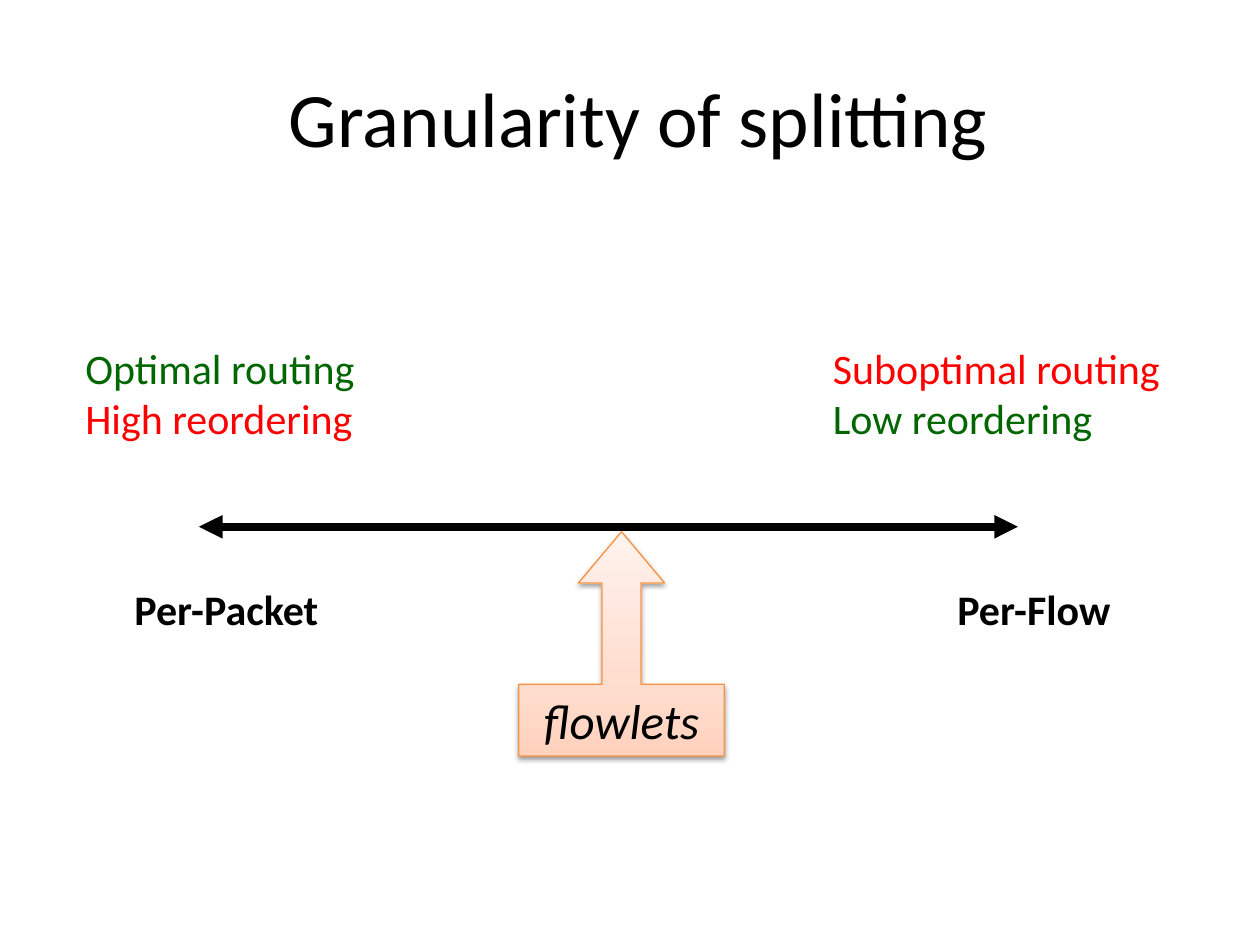
from dataclasses import dataclass

from lxml.etree import SubElement
from pptx import Presentation
from pptx.dml.color import RGBColor
from pptx.enum.shapes import MSO_CONNECTOR as Connector, MSO_SHAPE as Shape
from pptx.enum.text import MSO_ANCHOR as Anchor, MSO_AUTO_SIZE as AutoSize, PP_ALIGN as Align
from pptx.oxml.ns import qn
from pptx.util import Cm, Pt


@dataclass(frozen=True)
class Theme:
    font: str = "Calibri"
    ink: str = "000000"
    good: str = "006600"
    bad: str = "FF0000"
    callout_line: str = "F69240"
    callout_stops: tuple = ((0, "FFD2BD"), (35, "FFDED0"), (100, "FFF2ED"))
    title_size: int = 44
    body_size: int = 24
    callout_size: int = 28


THEME = Theme()


def rgb(color):
    return RGBColor.from_string(color)


def add_run(paragraph, text, size, color=THEME.ink, bold=None, italic=None):
    run = paragraph.add_run()
    run.text = text
    font = run.font
    font.name, font.size = THEME.font, Pt(size)
    font.bold, font.italic = bold, italic
    font.color.rgb = rgb(color)


def add_title(slide, text):
    box = slide.shapes.add_textbox(Cm(1.27), Cm(0.76), Cm(22.86), Cm(3.18))
    frame = box.text_frame
    frame.word_wrap = True
    frame.vertical_anchor = Anchor.MIDDLE
    paragraph = frame.paragraphs[0]
    paragraph.alignment = Align.CENTER
    add_run(paragraph, text, THEME.title_size)


def add_label(slide, left, top, width, height, lines, bold=None):
    """Add a text box with one paragraph per (text, color) line."""
    box = slide.shapes.add_textbox(Cm(left), Cm(top), Cm(width), Cm(height))
    frame = box.text_frame
    frame.word_wrap = False
    frame.auto_size = AutoSize.SHAPE_TO_FIT_TEXT
    for index, (text, color) in enumerate(lines):
        paragraph = frame.add_paragraph() if index else frame.paragraphs[0]
        add_run(paragraph, text, THEME.body_size, color, bold)


def add_double_arrow(slide, left, right, y):
    arrow = slide.shapes.add_connector(Connector.STRAIGHT, Cm(left), Cm(y), Cm(right), Cm(y))
    arrow.line.color.rgb = rgb(THEME.ink)
    arrow.line.width = Pt(4.5)
    line = arrow.line._get_or_add_ln()
    for end in ("a:headEnd", "a:tailEnd"):
        SubElement(line, qn(end), type="triangle")
    SubElement(arrow._element.spPr, qn("a:effectLst"))


def set_gradient(shape, stops, angle):
    shape.fill.gradient()
    shape.fill.gradient_angle = angle
    stop_list = shape._element.spPr.find(f".//{qn('a:gsLst')}")
    for stop in list(stop_list):
        stop_list.remove(stop)
    for position, color in stops:
        stop = SubElement(stop_list, qn("a:gs"), pos=str(position * 1000))
        SubElement(stop, qn("a:srgbClr"), val=color)


def set_soft_shadow(shape):
    shape.shadow.inherit = False
    effects = shape._element.spPr.find(qn("a:effectLst"))
    shadow = SubElement(effects, qn("a:outerShdw"), blurRad=str(Pt(3.1)), dist=str(Pt(1.6)),
                        dir="5400000", rotWithShape="0")
    color = SubElement(shadow, qn("a:srgbClr"), val=THEME.ink)
    SubElement(color, qn("a:alpha"), val="38000")


def add_callout(slide, left, top, width, height, text):
    callout = slide.shapes.add_shape(Shape.UP_ARROW_CALLOUT, Cm(left), Cm(top), Cm(width), Cm(height))
    for index, value in enumerate((0.19, 0.21, 0.25, 0.32)):
        callout.adjustments[index] = value
    set_gradient(callout, THEME.callout_stops, 90)
    callout.line.color.rgb = rgb(THEME.callout_line)
    callout.line.width = Pt(0.75)
    set_soft_shadow(callout)
    callout.text_frame.vertical_anchor = Anchor.MIDDLE
    paragraph = callout.text_frame.paragraphs[0]
    paragraph.alignment = Align.CENTER
    add_run(paragraph, text, THEME.callout_size, italic=True)


def main():
    presentation = Presentation()
    presentation.slide_width, presentation.slide_height = Cm(25.4), Cm(19.05)
    slide = presentation.slides.add_slide(presentation.slide_layouts[6])

    add_title(slide, " Granularity of splitting")

    # Scale and the names of its two ends
    add_double_arrow(slide, 4.01, 20.52, 10.62)
    for left, width, name in ((2.46, 4.27, "Per-Packet"), (19.05, 3.66, "Per-Flow")):
        add_label(slide, left, 11.63, width, 1.27, [(name, THEME.ink)], bold=True)

    # Trade-offs at each end
    add_label(slide, 1.47, 6.78, 5.97, 2.31,
              [("Optimal routing", THEME.good), ("High reordering", THEME.bad)])
    add_label(slide, 16.54, 6.78, 7.16, 2.31,
              [("Suboptimal routing", THEME.bad), ("Low reordering", THEME.good)])

    # Middle ground
    add_callout(slide, 10.46, 10.72, 4.14, 4.52, "flowlets")

    presentation.save("out.pptx")


if __name__ == "__main__":
    main()
